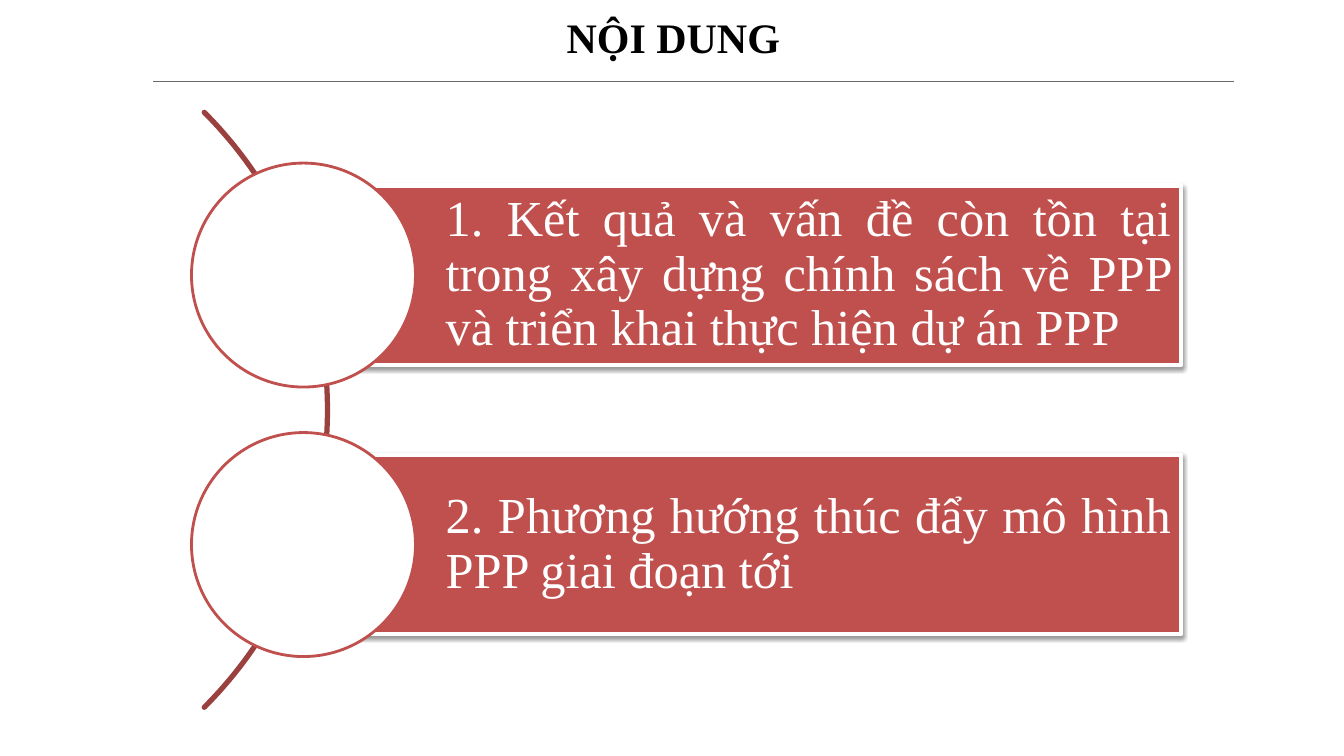
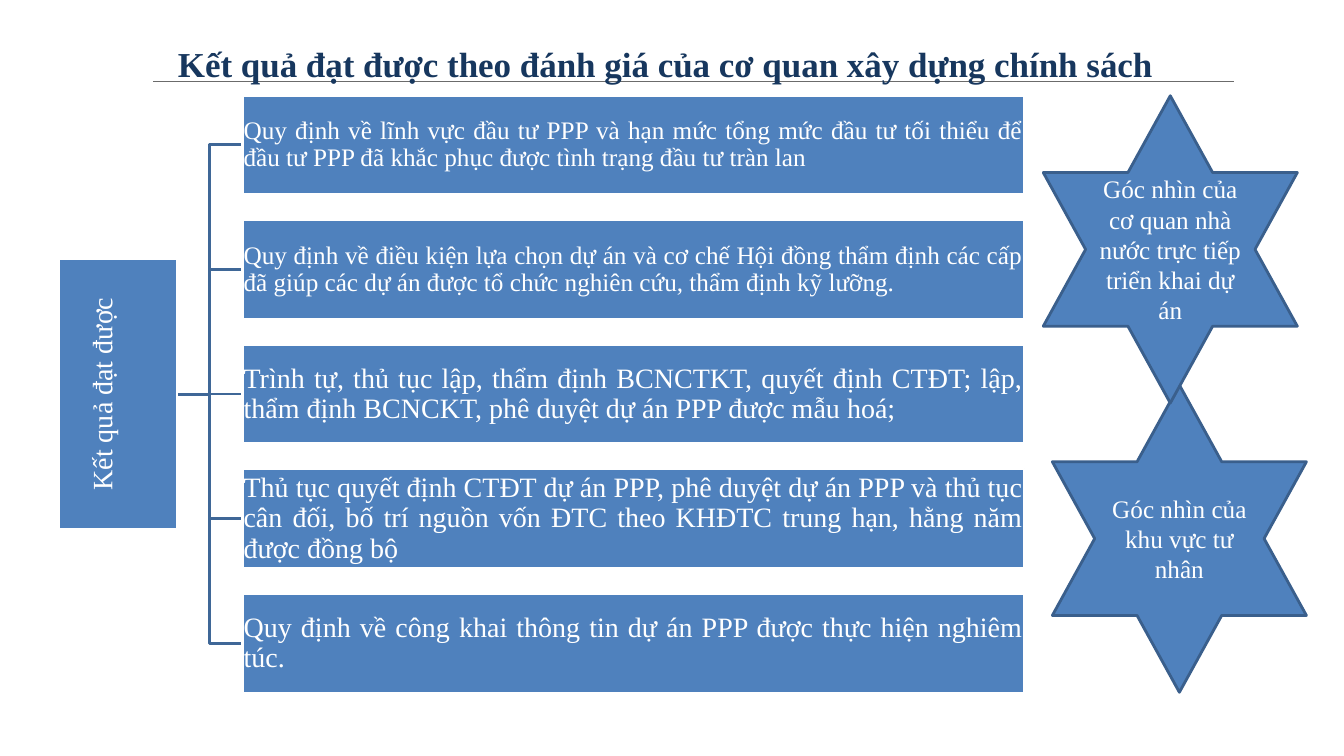
from math import cos, radians, sin

from lxml import etree
from pptx import Presentation
from pptx.dml.color import RGBColor
from pptx.enum.shapes import MSO_CONNECTOR as Connector, MSO_SHAPE as Preset
from pptx.enum.text import MSO_ANCHOR as Anchor, PP_ALIGN as Align
from pptx.oxml import parse_xml
from pptx.oxml.ns import nsdecls, qn
from pptx.util import Pt

FONT = "Times New Roman"
BLACK = RGBColor(0x00, 0x00, 0x00)
WHITE = RGBColor(0xFF, 0xFF, 0xFF)
NAVY = RGBColor(0x17, 0x37, 0x5E)
RED = RGBColor(0xC0, 0x50, 0x4D)
DARK_RED = RGBColor(0x9A, 0x40, 0x3E)
BLUE = RGBColor(0x4F, 0x81, 0xBD)
BRANCH_BLUE = RGBColor(0x3F, 0x67, 0x97)
STAR_EDGE = RGBColor(0x3A, 0x5F, 0x8C)
RULE_GREY = RGBColor(0x6B, 0x6B, 0x6B)

AGENDA = [
    "1. Kết quả và vấn đề còn tồn tại trong xây dựng chính sách về PPP và triển khai thực hiện dự án PPP",
    "2. Phương hướng thúc đẩy mô hình PPP giai đoạn tới",
]
RESULTS = [
    ("Quy định về lĩnh vực đầu tư PPP và hạn mức tổng mức đầu tư tối thiểu để đầu tư PPP đã khắc phục được tình trạng đầu tư tràn lan", 18),
    ("Quy định về điều kiện lựa chọn dự án và cơ chế Hội đồng thẩm định các cấp đã giúp các dự án được tổ chức nghiên cứu, thẩm định kỹ lưỡng.", 18),
    ("Trình tự, thủ tục lập, thẩm định BCNCTKT, quyết định CTĐT; lập, thẩm định BCNCKT, phê duyệt dự án PPP được mẫu hoá;", 20),
    ("Thủ tục quyết định CTĐT dự án PPP, phê duyệt dự án PPP và thủ tục cân đối, bố trí nguồn vốn ĐTC theo KHĐTC trung hạn, hằng năm được đồng bộ", 20),
    ("Quy định về công khai thông tin dự án PPP được thực hiện nghiêm túc.", 20),
]


def write_text(shape, text, size, color=WHITE, bold=False, align=Align.CENTER,
               spacing=1.0, insets=(7.2, 3.6, 7.2, 3.6)):
    """Fill a shape with one formatted, vertically centred paragraph."""
    frame = shape.text_frame
    frame.word_wrap = True
    frame.vertical_anchor = Anchor.MIDDLE
    frame.margin_left, frame.margin_top, frame.margin_right, frame.margin_bottom = map(Pt, insets)
    paragraph = frame.paragraphs[0]
    paragraph.alignment = align
    paragraph.line_spacing = spacing
    run = paragraph.add_run()
    run.text = text
    run.font.name, run.font.size, run.font.bold = FONT, Pt(size), bold
    run.font.color.rgb = color


def add_preset(slide, preset, box, fill, edge, width=2):
    """Add a filled and outlined preset shape without a shadow."""
    shape = slide.shapes.add_shape(preset, *map(Pt, box))
    shape.shadow.inherit = False
    shape.fill.solid()
    shape.fill.fore_color.rgb = fill
    shape.line.color.rgb = edge
    shape.line.width = Pt(width)
    return shape


def add_line(slide, start, end, color, width, kind=Connector.STRAIGHT):
    """Add a plain connector between two points."""
    line = slide.shapes.add_connector(kind, *map(Pt, (*start, *end)))
    line.line.color.rgb = color
    line.line.width = Pt(width)
    etree.SubElement(line._element.spPr, qn("a:effectLst"))


def add_drop_shadow(shape):
    """Give a shape a soft shadow that falls straight down."""
    effects = shape._element.spPr.find(qn("a:effectLst"))
    effects.append(parse_xml(
        f'<a:outerShdw {nsdecls("a")} blurRad="{Pt(3.1)}" dist="{Pt(1.6)}" dir="5400000" rotWithShape="0">'
        '<a:srgbClr val="000000"><a:alpha val="38000"/></a:srgbClr></a:outerShdw>'))


def add_titled_slide(presentation, title, box, size, color, align):
    """Add a blank slide with the shared rule and a bold title."""
    slide = presentation.slides.add_slide(presentation.slide_layouts[6])
    add_line(slide, (109.5, 58.3), (881.5, 58.3), RULE_GREY, 0.75)
    title_box = slide.shapes.add_textbox(*map(Pt, box))
    write_text(title_box, title, size, color=color, bold=True, align=align)
    return slide


def add_arc(slide, center_x, center_y, radius):
    """Draw the right-hand quarter of a circle as an open outline."""
    points = [(Pt(center_x + radius * cos(radians(angle))), Pt(center_y + radius * sin(radians(angle))))
              for angle in range(-45, 46)]
    builder = slide.shapes.build_freeform(*points[0], scale=1.0)
    builder.add_line_segments(points[1:], close=False)
    arc = builder.convert_to_shape()
    arc.shadow.inherit = False
    arc.fill.background()
    arc.line.color.rgb = DARK_RED
    arc.line.width = Pt(3.75)
    arc.line._get_or_add_ln().set("cap", "rnd")


def add_agenda(slide, box, entries):
    """Place circles with text bars along an arc, spread evenly in the box."""
    left, top, width, height = box
    diameter, bar_height = 160, 128
    bar_left = left + diameter / 2
    pitch = (height - diameter) / (len(entries) - 1)
    add_arc(slide, left - 203.4, top + height / 2, 300.5)
    for index, entry in enumerate(entries):
        circle_top = top + index * pitch
        bar_top = circle_top + (diameter - bar_height) / 2
        bar = add_preset(slide, Preset.RECTANGLE,
                         (bar_left, bar_top, width - diameter / 2, bar_height), RED, WHITE, 3)
        add_drop_shadow(bar)
        write_text(bar, entry, 36, align=Align.JUSTIFY, spacing=0.9, insets=(101.5, 7.2, 7.2, 7.2))
        add_preset(slide, Preset.OVAL, (left, circle_top, diameter, diameter), WHITE, RED)


def add_result_tree(slide, box, root, results):
    """Place a rotated root and its branches, spread evenly in the box."""
    left, top, width, height = box
    root_length, root_depth, branch_gap, branch_height = 193, 84.5, 46.5, 71
    root_right, middle = left + root_depth, top + height / 2
    branch_left = root_right + branch_gap
    pitch = (height - branch_height) / (len(results) - 1)
    tops = [top + index * pitch for index in range(len(results))]
    for branch_top in tops:
        branch_middle = branch_top + branch_height / 2
        kind = Connector.STRAIGHT if branch_middle == middle else Connector.ELBOW
        add_line(slide, (root_right, middle), (branch_left, branch_middle), BRANCH_BLUE, 2, kind)
    root_box = (left + (root_depth - root_length) / 2, middle - root_depth / 2, root_length, root_depth)
    root_shape = add_preset(slide, Preset.RECTANGLE, root_box, BLUE, WHITE)
    root_shape.rotation = 270
    write_text(root_shape, root, 20, spacing=0.9, insets=(1, 1, 1, 22))
    for branch_top, (text, size) in zip(tops, results):
        branch = add_preset(slide, Preset.RECTANGLE,
                            (branch_left, branch_top, left + width - branch_left, branch_height), BLUE, WHITE)
        write_text(branch, text, size, align=Align.JUSTIFY, spacing=0.9, insets=(1, 1, 1, 1))


def add_star(slide, left, top, text):
    """Add a six-pointed star with a caption."""
    star = add_preset(slide, Preset.STAR_6_POINT, (left, top, 181.5, 219.5), BLUE, STAR_EDGE)
    write_text(star, text, 18)


def build_agenda_slide(presentation):
    """Build the contents slide."""
    slide = add_titled_slide(presentation, "NỘI DUNG", (157, 9.4, 648, 33), 30, BLACK, Align.CENTER)
    add_agenda(slide, (136.8, 116.5, 707, 352.5), AGENDA)


def build_results_slide(presentation):
    """Build the slide of results and viewpoints."""
    slide = add_titled_slide(presentation, "Kết quả đạt được theo đánh giá của cơ quan xây dựng chính sách",
                             (120, 21.6, 762, 47), 25, NAVY, Align.LEFT)
    add_result_tree(slide, (42, 68, 689.5, 427), "Kết quả đạt được", RESULTS)
    add_star(slide, 751.7, 275, "Góc nhìn của khu vực tư nhân")
    add_star(slide, 745.2, 68.4, "Góc nhìn của cơ quan nhà nước trực tiếp triển khai dự án")


def main():
    """Build and save the presentation."""
    presentation = Presentation()
    presentation.slide_width, presentation.slide_height = Pt(960), Pt(540)
    build_agenda_slide(presentation)
    build_results_slide(presentation)
    presentation.save("out.pptx")


if __name__ == "__main__":
    main()
